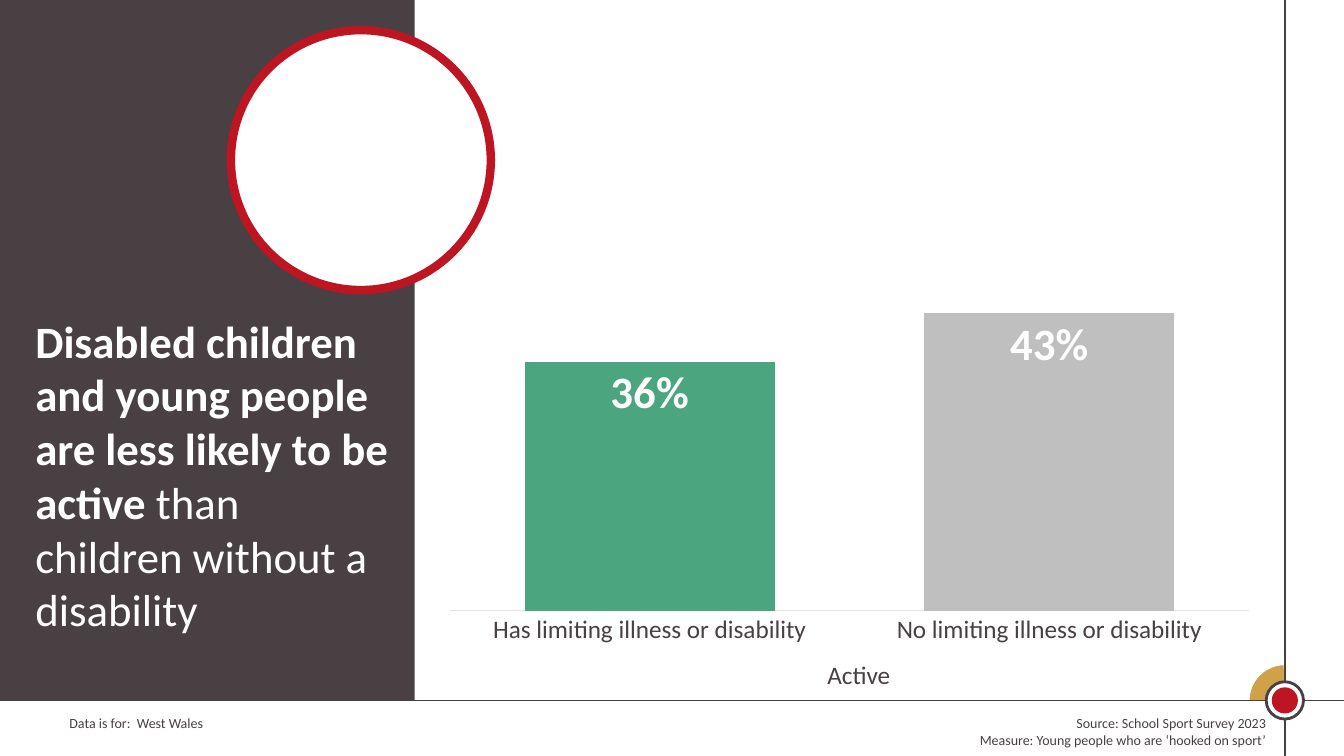
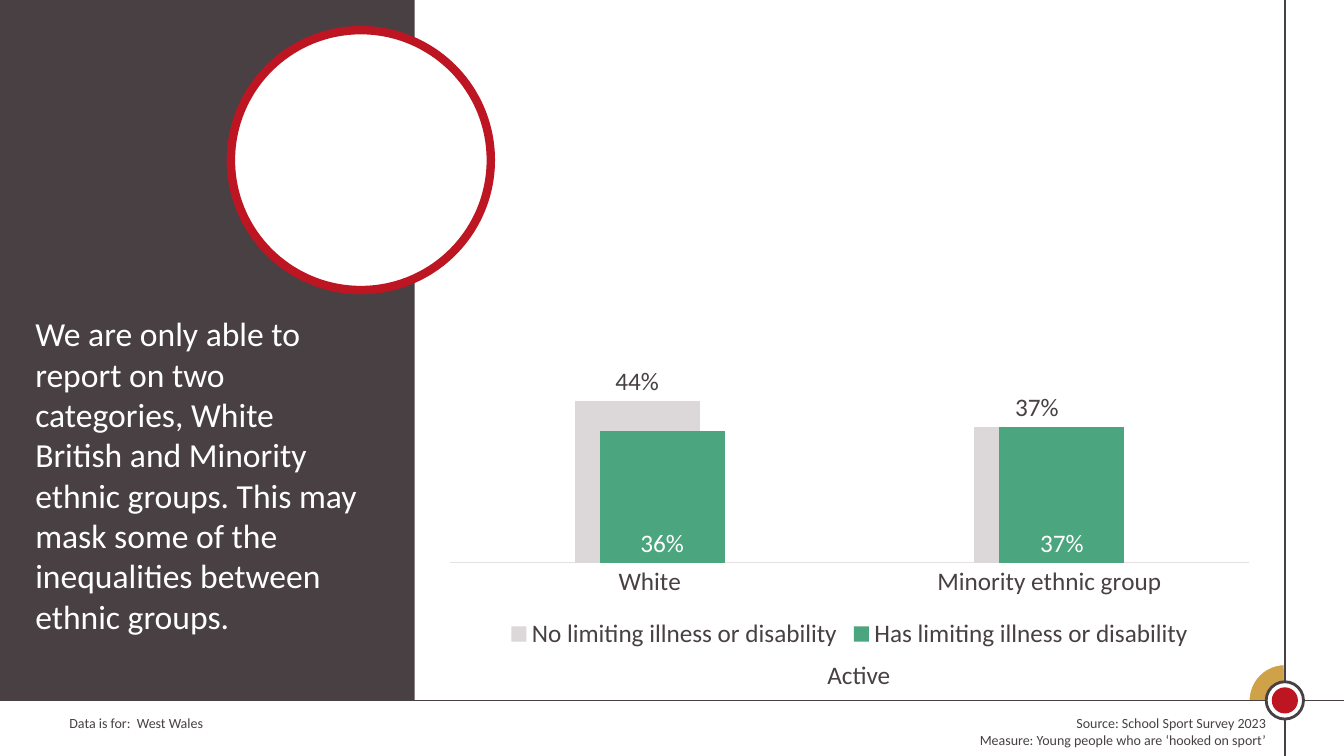
from lxml import etree
from pptx import Presentation
from pptx.chart.data import CategoryChartData
from pptx.dml.color import RGBColor
from pptx.enum.chart import XL_CHART_TYPE, XL_LABEL_POSITION, XL_LEGEND_POSITION, XL_TICK_MARK
from pptx.enum.shapes import MSO_CONNECTOR, MSO_SHAPE
from pptx.enum.text import PP_ALIGN
from pptx.oxml.ns import qn
from pptx.util import Cm, Pt

RECTANGLE, OVAL, PIE = MSO_SHAPE.RECTANGLE, MSO_SHAPE.OVAL, MSO_SHAPE.PIE
STRAIGHT = MSO_CONNECTOR.STRAIGHT
LEFT, RIGHT = PP_ALIGN.LEFT, PP_ALIGN.RIGHT
COLUMNS = XL_CHART_TYPE.COLUMN_CLUSTERED
INSIDE_END, INSIDE_BASE = XL_LABEL_POSITION.INSIDE_END, XL_LABEL_POSITION.INSIDE_BASE
OUTSIDE_END = XL_LABEL_POSITION.OUTSIDE_END
LEGEND_BOTTOM = XL_LEGEND_POSITION.BOTTOM
NO_TICK = XL_TICK_MARK.NONE

FONT = "Calibri"
DARK, RED, GOLD, GREEN, WHITE = "484043", "BD1622", "CFA149", "4BA57E", "FFFFFF"
GREY, PALE, AXIS = "BFBFBF", "DCD7D9", "E5E1E3"

SLIDE_WIDTH, SLIDE_HEIGHT = 33.87, 19.05
MARKER_X, FOOTER_Y = 32.38, 17.65
CHART_BOX = (10.92, 4.7, 20.98, 11.79)


def colour(value):
    return RGBColor.from_string(value)


def style_font(font, size, value, bold=False):
    font.name = FONT
    font.size = Pt(size)
    font.bold = bold
    font.color.rgb = colour(value)


def add_shape(slide, kind, box, fill, line=None, line_width=0):
    shape = slide.shapes.add_shape(kind, *map(Cm, box))
    shape.shadow.inherit = False
    shape.fill.solid()
    shape.fill.fore_color.rgb = colour(fill)
    if line:
        shape.line.color.rgb = colour(line)
        shape.line.width = Pt(line_width)
    else:
        shape.line.fill.background()
    return shape


def add_marker_part(slide, kind, size, fill, line=None, line_width=0):
    box = (MARKER_X - size / 2, FOOTER_Y - size / 2, size, size)
    return add_shape(slide, kind, box, fill, line, line_width)


def add_line(slide, *ends):
    connector = slide.shapes.add_connector(STRAIGHT, *map(Cm, ends))
    connector.line.color.rgb = colour(DARK)
    connector.line.width = Pt(1)
    etree.SubElement(connector._element.spPr, qn("a:effectLst"))


def add_text(slide, box, paragraphs, size, value, alignment=LEFT):
    frame = slide.shapes.add_textbox(*map(Cm, box)).text_frame
    frame.word_wrap = True
    for index, runs in enumerate(paragraphs):
        paragraph = frame.paragraphs[0] if index == 0 else frame.add_paragraph()
        paragraph.alignment = alignment
        for text, bold in runs:
            run = paragraph.add_run()
            run.text = text
            style_font(run.font, size, value, bold)


def add_frame(slide):
    add_text(slide, (1.5, 17.88, 11.15, 0.69), [[("Data is for:  West Wales", False)]], 10, DARK)
    quarter = add_marker_part(slide, PIE, 1.83, GOLD, WHITE, 1.5)
    quarter.adjustments[0] = 106.62
    quarter.adjustments[1] = 162
    add_line(slide, MARKER_X, 0, MARKER_X, SLIDE_HEIGHT)
    add_line(slide, 0, FOOTER_Y, SLIDE_WIDTH, FOOTER_Y)
    add_marker_part(slide, OVAL, 0.94, WHITE, DARK, 2)
    add_marker_part(slide, OVAL, 0.66, RED)
    add_shape(slide, RECTANGLE, (0, 0, 10.45, FOOTER_Y), DARK)
    add_shape(slide, OVAL, (5.82, 0.76, 6.55, 6.55), WHITE, RED, 6)
    source = [
        [("Source: School Sport Survey 2023", False)],
        [("Measure: Young people who are ‘hooked on sport’", False)],
    ]
    add_text(slide, (15.72, 17.88, 16.43, 1.12), source, 10, DARK, RIGHT)


def add_message(slide, width, runs, size):
    add_text(slide, (0.64, 7.77, width, 9.6), [runs], size, WHITE)


def add_chart_caption(slide, text):
    add_text(slide, (20.6, 16.5, 3.1, 1.02), [[(text, False)]], 18, DARK)


def add_column_chart(slide, categories, series, maximum, gap, overlap=0):
    data = CategoryChartData(number_format="0%")
    data.categories = categories
    for name, values, *_ in series:
        data.add_series(name, values)
    chart = slide.shapes.add_chart(COLUMNS, *map(Cm, CHART_BOX), data).chart
    style_font(chart.font, 18, DARK)
    chart.has_title = False
    chart.has_legend = len(series) > 1
    if chart.has_legend:
        chart.legend.position = LEGEND_BOTTOM
        chart.legend.include_in_layout = False
        style_font(chart.legend.font, 18, DARK)

    category_axis = chart.category_axis
    category_axis.major_tick_mark = NO_TICK
    category_axis.format.line.color.rgb = colour(AXIS)
    category_axis.format.line.width = Pt(0.75)
    style_font(category_axis.tick_labels.font, 18, DARK)
    value_axis = chart.value_axis
    value_axis.visible = False
    value_axis.has_major_gridlines = False
    value_axis.minimum_scale = 0
    value_axis.maximum_scale = maximum

    plot = chart.plots[0]
    plot.vary_by_categories = False
    plot.gap_width = gap
    plot.overlap = overlap
    for columns, (_, _, fill, position, label_style) in zip(plot.series, series):
        columns.format.fill.solid()
        columns.format.fill.fore_color.rgb = colour(fill)
        labels = columns.data_labels
        labels.show_value = True
        labels.number_format = "0%"
        labels.number_format_is_linked = False
        labels.position = position
        style_font(labels.font, *label_style)
    return chart


def add_disability_slide(slide):
    add_frame(slide)
    message = [
        ("Disabled children and young people are less likely to be active ", True),
        ("than children without a disability", False),
    ]
    add_message(slide, 9.42, message, 32)
    add_chart_caption(slide, "Active")
    chart = add_column_chart(
        slide,
        ["Has limiting illness or disability", "No limiting illness or disability"],
        [("Series 1", (0.36, 0.43), GREEN, INSIDE_END, (32, WHITE, True))],
        maximum=0.6,
        gap=60,
    )
    comparison = chart.plots[0].series[0].points[1].format.fill
    comparison.solid()
    comparison.fore_color.rgb = colour(GREY)


def add_ethnicity_slide(slide):
    add_frame(slide)
    message = (
        "We are only able to report on two categories, White British and Minority "
        "ethnic groups. This may mask some of the inequalities between ethnic groups."
    )
    add_message(slide, 8.71, [(message, False)], 24)
    add_chart_caption(slide, "Active")
    add_column_chart(
        slide,
        ["White", "Minority ethnic group"],
        [
            ("No limiting illness or disability", (0.44, 0.37), PALE, OUTSIDE_END, (18, DARK)),
            ("Has limiting illness or disability", (0.36, 0.37), GREEN, INSIDE_BASE, (18, WHITE)),
        ],
        maximum=1,
        gap=200,
        overlap=80,
    )


def main():
    presentation = Presentation()
    presentation.slide_width = Cm(SLIDE_WIDTH)
    presentation.slide_height = Cm(SLIDE_HEIGHT)
    blank = presentation.slide_layouts[6]
    for build in (add_disability_slide, add_ethnicity_slide):
        build(presentation.slides.add_slide(blank))
    presentation.save("out.pptx")


if __name__ == "__main__":
    main()
